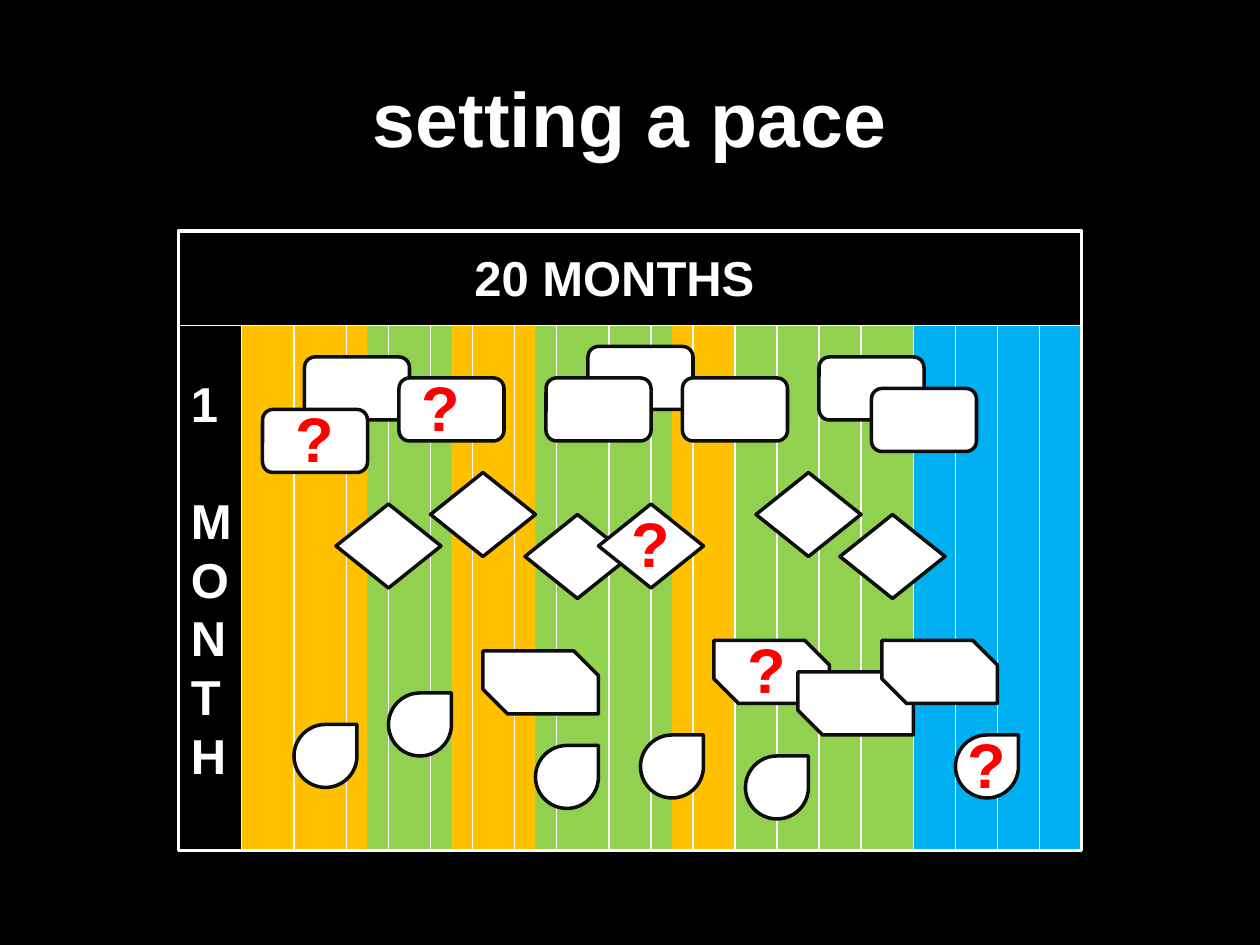
from itertools import accumulate

from lxml import etree
from pptx import Presentation
from pptx import util as u
from pptx.dml.color import RGBColor
from pptx.enum import shapes, text
from pptx.oxml.ns import qn

PX = 7620  # EMU per px, 120 px to the inch
COLORS = {
    "black": "000000", "white": "FFFFFF", "ink": "0D0D0D", "red": "FF0000",
    "amber": "FFC000", "green": "92D050", "blue": "00B0F0",
}
KIND = shapes.MSO_SHAPE


class Painter:
    """Holds the style and the page being drawn."""

    font = "Arial"

    def __init__(self, page):
        self.page = page
        self.target = page.shapes

    def color(self, name):
        return RGBColor.from_string(COLORS[name])

    def background(self, name):
        fill = self.page.background.fill
        fill.solid()
        fill.fore_color.rgb = self.color(name)

    def group(self):
        """Send the elements that follow into a new group."""
        self.target = self.page.shapes.add_group_shape().shapes

    def shape(self, kind, *place, fill=None, line=None, adjust=()):
        shape = self.target.add_shape(kind, *(v * PX for v in place))
        shape.shadow.inherit = False
        for i, value in enumerate(adjust):
            shape.adjustments[i] = value
        if fill:
            shape.fill.solid()
            shape.fill.fore_color.rgb = self.color(fill)
        else:
            shape.fill.background()
        if line:
            shape.line.color.rgb = self.color(line)
            shape.line.width = u.Pt(2)
        else:
            shape.line.fill.background()
        return shape

    def line(self, *ends):
        line = self.target.add_connector(
            shapes.MSO_CONNECTOR.STRAIGHT, *(v * PX for v in ends))
        line.line.color.rgb = self.color("white")
        line.line.width = u.Pt(0.75)
        etree.SubElement(line._element.spPr, qn("a:effectLst"))
        return line

    def text(self, paras, *place, size, color="white", align="LEFT",
             anchor="TOP", pitch=None):
        box = self.target.add_textbox(*(v * PX for v in place))
        frame = box.text_frame
        frame.word_wrap = True
        frame.vertical_anchor = getattr(text.MSO_ANCHOR, anchor)
        for i, words in enumerate(paras):
            para = frame.add_paragraph() if i else frame.paragraphs[0]
            para.alignment = getattr(text.PP_ALIGN, align)
            if pitch:
                para.line_spacing = u.Pt(pitch)
                para.space_before = u.Pt(pitch if i else 0)
            span = para.add_run()
            span.text = words
            span.font.name = self.font
            span.font.size = u.Pt(size)
            span.font.bold = True
            span.font.color.rgb = self.color(color)


# Calendar geometry
LEFT, TOP, WIDTH, HEIGHT = 170, 220, 860, 590
GRID_TOP, GRID_LEFT = 310, 230
BOTTOM = TOP + HEIGHT
BANDS = [
    (230, 470, "amber"), (510, 130, "green"), (700, 170, "green"),
    (350, 80, "green"), (870, 160, "blue"),
]
MONTH_WIDTHS = [50] * 2 + [40] * 5 + [50] + [40] * 6 + [50] + [40] * 3

# Task cards: kind, width, height, adjustments, top-left corners
CARDS = [
    (KIND.ROUNDED_RECTANGLE, 100, 60, (),
     [(290, 340), (380, 360), (560, 330), (650, 360),
      (780, 340), (250, 390), (520, 360), (830, 370)]),
    (KIND.DIAMOND, 100, 80, (),
     [(320, 480), (410, 450), (500, 490), (570, 480), (720, 450), (800, 490)]),
    (KIND.SNIP_2_DIAG_RECTANGLE, 110, 60, (0, 0.39),
     [(460, 620), (680, 610), (760, 640), (840, 610)]),
    (KIND.TEAR, 60, 60, (),
     [(280, 690), (370, 660), (510, 710), (610, 700), (710, 720), (910, 700)]),
]
DOUBTS = [(270, 375), (590, 475), (390, 345), (700, 595), (910, 685)]


def main():
    deck = Presentation()
    deck.slide_width, deck.slide_height = 1200 * PX, 900 * PX
    page = deck.slides.add_slide(deck.slide_layouts[6])
    painter = Painter(page)
    painter.background("black")

    # Coloured phases
    middles = {}
    for x, width, fill in BANDS:
        middles[x + width // 2] = painter.shape(
            KIND.RECTANGLE, x, GRID_TOP, width, BOTTOM - GRID_TOP, fill=fill)

    # Title
    painter.text(["setting a pace"], 60, 36, 1080, 150, size=44,
                 align="CENTER", anchor="MIDDLE")

    # Month dividers, joined to a phase where they meet its middle
    for x in accumulate(MONTH_WIDTHS, initial=GRID_LEFT):
        divider = painter.line(x, BOTTOM, x, GRID_TOP)
        if x in middles:
            divider.begin_connect(middles[x], 2)
            divider.end_connect(middles[x], 0)

    # Frame and its labels
    painter.text(["1", "MONTH"], LEFT, 350, 70, 408, size=28, pitch=33.5)
    painter.shape(KIND.RECTANGLE, LEFT, TOP, WIDTH, HEIGHT, line="white")
    painter.line(LEFT, GRID_TOP, LEFT + WIDTH, GRID_TOP)

    # Task cards, one group for each kind
    for kind, width, height, adjust, corners in CARDS:
        painter.group()
        for x, y in corners:
            painter.shape(kind, x, y, width, height, fill="white",
                          line="ink", adjust=adjust)

    # Heading of the calendar
    painter.target = page.shapes
    painter.text(["20 MONTHS"], 440, 230, 300, 68, size=28)

    # Question marks on the doubtful tasks
    painter.group()
    for x, y in DOUBTS:
        painter.text(["?"], x, y, 50, 85, size=36, color="red")

    deck.save("out.pptx")


if __name__ == "__main__":
    main()
